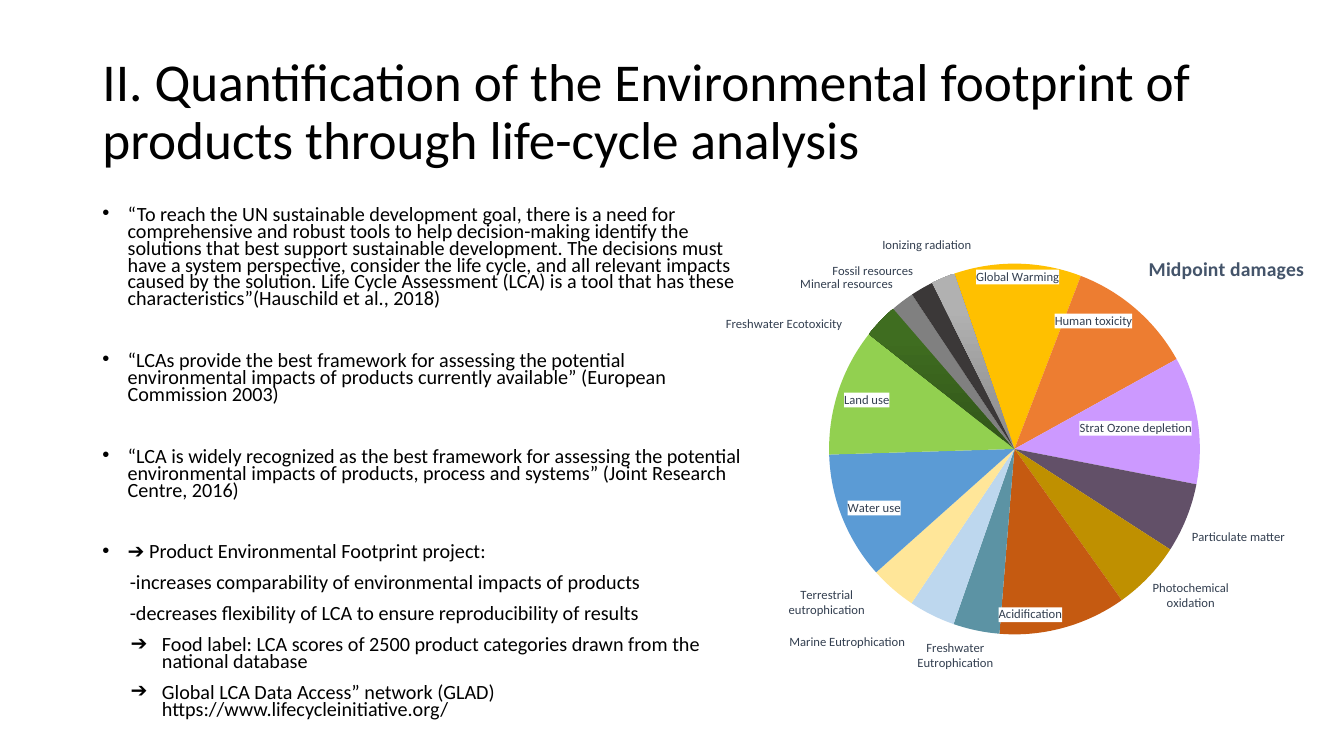
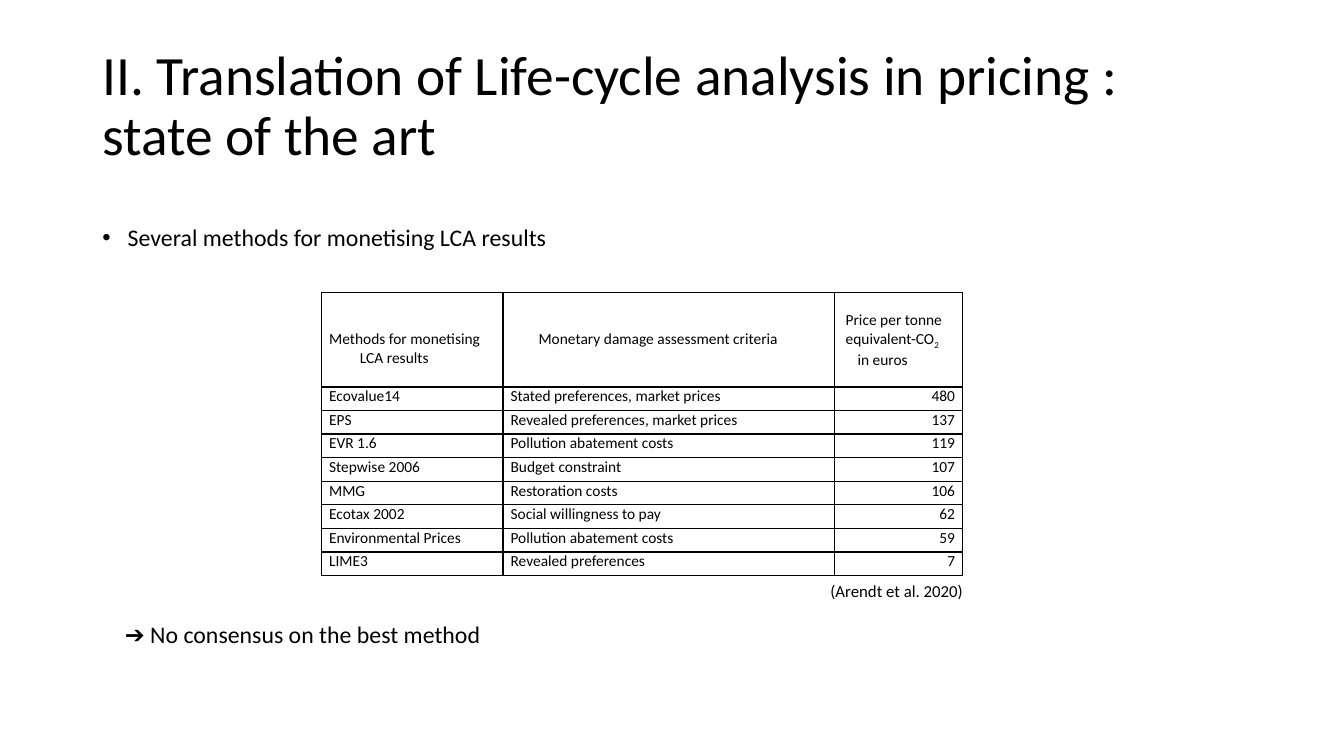
from lxml import etree
from pptx import Presentation
from pptx.chart.data import CategoryChartData as ChartData
from pptx.dml.color import RGBColor
from pptx.enum.chart import XL_CHART_TYPE as ChartType
from pptx.enum.text import MSO_ANCHOR as Anchor, MSO_AUTO_SIZE as AutoSize, PP_ALIGN as Align
from pptx.oxml import parse_xml
from pptx.oxml.ns import nsdecls, qn
from pptx.util import Pt

FONT = "Calibri"
COLORS = {
    "text": "000000", "label": "333F50", "title": "44546A", "plate": "FFFFFF",
    "gold": "FFC000", "orange": "ED7D31", "lilac": "CC99FF", "plum": "625068",
    "ochre": "BF9000", "rust": "C55A11", "teal": "5C93A4", "pale blue": "BDD7EE",
    "cream": "FFE699", "blue": "5B9BD5", "green": "92D050", "gray": "808080",
    "charcoal": "3B3838", "forest": "315419", "leaf": "3F6D20",
    "steel": "898989", "silver": "B1B1B1",
}

IMPACTS = [
    ("Global Warming", 11, "gold", "inEnd", None),
    ("Human toxicity", 11, "orange", "inEnd", None),
    ("Strat Ozone depletion", 11, "lilac", "inEnd", None),
    ("Particulate matter", 6, "plum", "outEnd", (0, 0.02)),
    ("Photochemical oxidation", 6, "ochre", "outEnd", None),
    ("Acidification", 11, "rust", "inEnd", None),
    ("Freshwater Eutrophication", 4, "teal", "outEnd", (0.03, 0.01)),
    ("Marine Eutrophication", 4, "pale blue", "outEnd", (-0.04, 0.03)),
    ("Terrestrial eutrophication", 4, "cream", "outEnd", (-0.04, -0.01)),
    ("Water use", 11, "blue", "inEnd", None),
    ("Land use", 11, "green", "inEnd", None),
    ("Freshwater Ecotoxicity", 3, ("forest", "leaf"), "outEnd", (-0.1, 0.03)),
    ("Mineral resources", 2, "gray", "outEnd", (-0.01, -0.01)),
    ("Fossil resources", 2, "charcoal", "outEnd", (-0.01, -0.01)),
    ("Ionizing radiation", 2, ("steel", "silver"), "outEnd", (0.05, -0.04)),
]

HEADER = [
    (26.9, [("Methods for monetising", 0), ("LCA results", 22)]),
    (26.9, [("Monetary damage assessment criteria", 20)]),
    (13.4, [("Price per tonne", 2.5), ("equivalent-CO", 2.5), ("in euros", 11)]),
]

METHODS = [
    ("Ecovalue14", "Stated preferences, market prices", "480"),
    ("EPS", "Revealed preferences, market prices", "137"),
    ("EVR 1.6", "Pollution abatement costs", "119"),
    ("Stepwise 2006", "Budget constraint", "107"),
    ("MMG", "Restoration costs", "106"),
    ("Ecotax 2002", "Social willingness to pay", "62"),
    ("Environmental Prices", "Pollution abatement costs", "59"),
    ("LIME3", "Revealed preferences", "7"),
]


def rgb(name):
    return RGBColor.from_string(COLORS[name])


def style_font(font, size, color="text"):
    font.name = FONT
    font.size = Pt(size)
    font.color.rgb = rgb(color)


def write(frame, text, size, first=False, color="text", align=Align.LEFT,
          indent=0, hang=0, bullet=None, line=1.0, before=0):
    para = frame.paragraphs[0] if first else frame.add_paragraph()
    para.alignment = align
    para.line_spacing = line
    para.space_before = Pt(before)
    for number, part in enumerate(text.split("\n")):
        if number:
            para.add_line_break()
        span = para.add_run()
        span.text = part
        style_font(span.font, size, color)
    props = para._p.get_or_add_pPr()
    props.set("marL", str(Pt(indent)))
    props.set("indent", str(Pt(-hang)))
    if bullet:
        etree.SubElement(props, qn("a:buFont")).set("typeface", "Arial")
        etree.SubElement(props, qn("a:buChar")).set("char", bullet)
    else:
        etree.SubElement(props, qn("a:buNone"))
    return para


def place(shape, left, top, width, height):
    shape.left, shape.top = Pt(left), Pt(top)
    shape.width, shape.height = Pt(width), Pt(height)


def add_page(deck, title, size, title_height, body_area):
    page = deck.slides.add_slide(deck.slide_layouts[1])
    heading, body = page.shapes.title, page.placeholders[1]
    place(heading, 66, 28.8, 828, title_height)
    place(body, *body_area)
    for box in (heading, body):
        box.text_frame.word_wrap = True
        box.text_frame.auto_size = AutoSize.NONE
    heading.text_frame.vertical_anchor = Anchor.MIDDLE
    write(heading.text_frame, title, size, first=True, line=0.9)
    return page, body.text_frame


def set_layout(parent, index, **values):
    old = parent.find(qn("c:layout"))
    if old is not None:
        parent.remove(old)
    layout = etree.Element(qn("c:layout"))
    manual = etree.SubElement(layout, qn("c:manualLayout"))
    for key, value in values.items():
        etree.SubElement(manual, qn("c:" + key)).set("val", str(value))
    parent.insert(index, layout)


def label_format(position, plate):
    fill = (f'<a:solidFill><a:srgbClr val="{COLORS["plate"]}"/></a:solidFill>'
            if plate else "<a:noFill/>")
    return (f'<c:spPr>{fill}<a:ln><a:noFill/></a:ln></c:spPr>'
            '<c:txPr><a:bodyPr/><a:p><a:pPr><a:defRPr sz="900">'
            f'<a:solidFill><a:srgbClr val="{COLORS["label"]}"/></a:solidFill>'
            f'<a:latin typeface="{FONT}"/></a:defRPr></a:pPr></a:p></c:txPr>'
            f'<c:dLblPos val="{position}"/><c:showLegendKey val="0"/>'
            '<c:showVal val="0"/><c:showCatName val="1"/><c:showSerName val="0"/>'
            '<c:showPercent val="0"/><c:showBubbleSize val="0"/>')


def add_labels(series):
    labels = ""
    for index, (_, _, _, position, shift) in enumerate(IMPACTS):
        layout = ""
        if shift:
            layout = ('<c:layout><c:manualLayout>'
                      f'<c:x val="{shift[0]}"/><c:y val="{shift[1]}"/>'
                      '</c:manualLayout></c:layout>')
        labels += (f'<c:dLbl><c:idx val="{index}"/>{layout}'
                   f'{label_format(position, position == "inEnd")}</c:dLbl>')
    series._element.find(qn("c:cat")).addprevious(parse_xml(
        f'<c:dLbls {nsdecls("c", "a")}>{labels}{label_format("outEnd", False)}'
        '<c:showLeaderLines val="0"/></c:dLbls>'))


def paint_slices(series):
    for index, (_, _, color, _, _) in enumerate(IMPACTS):
        slice_format = series.points[index].format
        slice_format.line.fill.background()
        fill = slice_format.fill
        if isinstance(color, str):
            fill.solid()
            fill.fore_color.rgb = rgb(color)
            continue
        fill.gradient()
        fill.gradient_angle = 90
        for stop, name, position in zip(fill.gradient_stops, color, (0, 0.8)):
            stop.color.rgb = rgb(name)
            stop.position = position


def add_pie(page):
    data = ChartData()
    data.categories = [impact[0] for impact in IMPACTS]
    data.add_series("Series 1", [impact[1] for impact in IMPACTS])
    chart = page.shapes.add_chart(
        ChartType.PIE, Pt(518.4), Pt(126), Pt(434.2), Pt(360.7), data).chart
    style_font(chart.font, 10)
    chart.has_legend = False
    chart.has_title = True
    write(chart.chart_title.text_frame, "Midpoint damages", 14, first=True, color="title")
    chart.chart_title.include_in_layout = False
    set_layout(chart.chart_title._element, 1, xMode="edge", yMode="edge", x=0.69, y=0.15)
    plot = chart.plots[0]
    plot.vary_by_categories = True
    pie = plot._element
    set_layout(pie.getparent(), 0, layoutTarget="inner", xMode="edge", yMode="edge",
               x=0.17, y=0.17, w=0.61, h=0.74)
    angle = pie.find(qn("c:firstSliceAng"))
    if angle is None:
        angle = etree.SubElement(pie, qn("c:firstSliceAng"))
    angle.set("val", "341")
    paint_slices(plot.series[0])
    add_labels(plot.series[0])


def format_cell(cell, top=0):
    cell.margin_left = cell.margin_right = Pt(5.4)
    cell.margin_top, cell.margin_bottom = Pt(top), 0
    cell.vertical_anchor = Anchor.TOP
    props = cell._tc.get_or_add_tcPr()
    for side in "LRTB":
        props.append(parse_xml(
            f'<a:ln{side} {nsdecls("a")} w="{Pt(1)}"><a:solidFill>'
            f'<a:srgbClr val="{COLORS["text"]}"/></a:solidFill></a:ln{side}>'))
    cell.fill.background()


def add_methods_table(page):
    widths = (129.6, 236.9, 91.4)
    heights = [67.6] + [16.85] * len(METHODS)
    table = page.shapes.add_table(
        len(heights), len(widths), Pt(229.7), Pt(208.8),
        Pt(sum(widths)), Pt(sum(heights))).table
    table.first_row = table.horz_banding = False
    for column, width in zip(table.columns, widths):
        column.width = Pt(width)
    for row, height in zip(table.rows, heights):
        row.height = Pt(height)
    for column, (top, lines) in enumerate(HEADER):
        cell = table.cell(0, column)
        format_cell(cell, top)
        for number, (text, indent) in enumerate(lines):
            para = write(cell.text_frame, text, 11, first=number == 0, indent=indent)
            if text.endswith("CO"):
                span = para.add_run()
                span.text = "2"
                style_font(span.font, 11)
                span._r.get_or_add_rPr().set("baseline", "-25000")
    for row, method in enumerate(METHODS, 1):
        for column, text in enumerate(method):
            cell = table.cell(row, column)
            format_cell(cell)
            write(cell.text_frame, text, 11, first=True,
                  align=Align.RIGHT if column == 2 else Align.LEFT)


def add_caption(page, text):
    box = page.shapes.add_textbox(Pt(586.1), Pt(411.1), Pt(110.2), Pt(21.8))
    box.text_frame.word_wrap = False
    box.text_frame.auto_size = AutoSize.SHAPE_TO_FIT_TEXT
    write(box.text_frame, text, 12, first=True)


def build_footprint_page(deck):
    page, body = add_page(
        deck, "II. Quantification of the Environmental footprint of products "
        "through life-cycle analysis", 38, 104.4, (66, 144.7, 473.8, 375.8))
    quote = dict(indent=18, hang=18, bullet="•", before=32)
    detail = dict(indent=19.5, before=10)
    arrow = dict(indent=42.5, hang=22.3, bullet="➔", before=10)
    lines = [
        ("“To reach the UN sustainable development goal, there is a need for comprehensive "
         "and robust tools to help decision-making identify the solutions that best support "
         "sustainable development. The decisions must have a system perspective, consider "
         "the life cycle, and all relevant impacts caused by the solution. Life Cycle "
         "Assessment (LCA) is a tool that has these characteristics”(Hauschild et al., 2018)",
         quote),
        ("“LCAs provide the best framework for assessing the potential environmental impacts "
         "of products currently available” (European Commission 2003)", quote),
        ("“LCA is widely recognized as the best framework for assessing the potential "
         "environmental impacts of products, process and systems” (Joint Research Centre, "
         "2016)", quote),
        ("➔ Product Environmental Footprint project:", quote),
        ("-increases comparability of environmental impacts of products", detail),
        ("-decreases flexibility of LCA to ensure reproducibility of results", detail),
        ("Food label: LCA scores of 2500 product categories drawn from the national "
         "database", arrow),
        ("Global LCA Data Access” network (GLAD) https://www.lifecycleinitiative.org/", arrow),
    ]
    for number, (text, look) in enumerate(lines):
        write(body, text, 14.4, first=number == 0, line=0.7, **look)
    add_pie(page)


def build_pricing_page(deck):
    page, body = add_page(
        deck, "II. Translation of Life-cycle analysis in pricing :\nstate of the art",
        39.6, 95.8, (66, 129.6, 390.2, 342.7))
    body.margin_top = Pt(32)
    write(body, "Several methods for monetising LCA results", 17, first=True,
          indent=18, hang=18, bullet="•", line=0.9)
    write(body, "➔ No consensus on the best method", 17, indent=16, line=0.9, before=265)
    add_methods_table(page)
    add_caption(page, "(Arendt et al. 2020)")


def main():
    deck = Presentation()
    deck.slide_width, deck.slide_height = Pt(960), Pt(540)
    build_footprint_page(deck)
    build_pricing_page(deck)
    deck.save("out.pptx")


if __name__ == "__main__":
    main()
